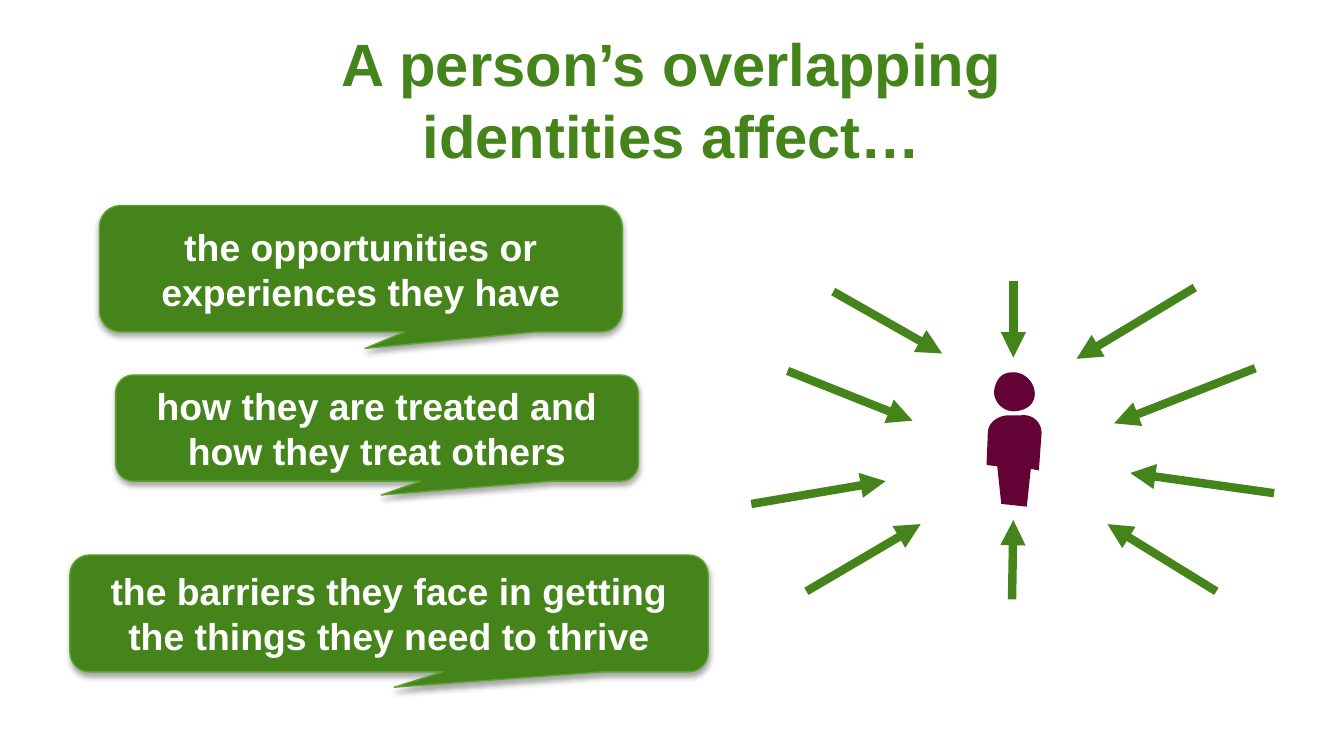
from dataclasses import dataclass

from lxml.etree import SubElement
from pptx import Presentation
from pptx.dml.color import RGBColor
from pptx.enum.shapes import MSO_CONNECTOR, MSO_SHAPE
from pptx.enum.text import MSO_ANCHOR, PP_ALIGN
from pptx.oxml.ns import qn
from pptx.util import Inches, Pt


@dataclass(frozen=True)
class Theme:
    font: str = "Arial"
    green: RGBColor = RGBColor(0x44, 0x84, 0x1A)
    light_green: RGBColor = RGBColor(0x5E, 0xA4, 0x30)
    plum: RGBColor = RGBColor(0x63, 0x02, 0x35)
    white: RGBColor = RGBColor(0xFF, 0xFF, 0xFF)
    title_size: int = 32
    callout_size: int = 20
    arrow_width: float = 4.5
    outline_width: float = 0.75


THEME = Theme()

CALLOUTS = [
    ("the opportunities or experiences they have", 0.74, 1.53, 3.89, 0.94),
    ("how they are treated and how they treat others", 0.86, 2.79, 3.89, 0.79),
    ("the barriers they face in getting the things they need to thrive",
     0.52, 4.13, 4.75, 0.87),
]

# Each arrow runs from its outer end to its head beside the person.
ARROWS = [
    ((6.2, 2.17), (7.01, 2.63)),
    ((9.05, 4.4), (8.24, 3.9)),
    ((9.48, 3.67), (8.41, 3.52)),
    ((9.34, 2.74), (8.29, 3.15)),
    ((8.89, 2.14), (8.01, 2.67)),
    ((6, 4.4), (6.85, 3.9)),
    ((5.86, 2.76), (6.79, 3.13)),
    ((5.59, 3.75), (6.59, 3.58)),
    ((7.54, 2.09), (7.54, 2.66)),
    ((7.53, 4.46), (7.54, 3.87)),
]

# A segment is one point for a straight edge, or two controls and an end point.
HEAD = [
    [(7.54, 3.06)],
    [(7.63, 3.06), (7.7, 3.01), (7.7, 2.93)],
    [(7.7, 2.85), (7.63, 2.77), (7.54, 2.77)],
    [(7.46, 2.77), (7.42, 2.81), (7.4, 2.89)],
    [(7.38, 2.98), (7.46, 3.06), (7.54, 3.06)],
]
BODY = [
    [(7.6, 3.09)],
    [(7.51, 3.09)],
    [(7.42, 3.09), (7.35, 3.15), (7.35, 3.22)],
    [(7.34, 3.46)],
    [(7.42, 3.47)],
    [(7.45, 3.75)],
    [(7.64, 3.77)],
    [(7.67, 3.49)],
    [(7.73, 3.5)],
    [(7.75, 3.22)],
    [(7.75, 3.15), (7.69, 3.08), (7.6, 3.09)],
]


def write_text(shape, text, *, size, color, anchor):
    frame = shape.text_frame
    frame.word_wrap = True
    frame.vertical_anchor = anchor
    paragraph = frame.paragraphs[0]
    paragraph.alignment = PP_ALIGN.CENTER
    run = paragraph.add_run()
    run.text = text
    run.font.name = THEME.font
    run.font.size = Pt(size)
    run.font.bold = True
    run.font.color.rgb = color


def add_title(slide, text):
    box = slide.shapes.add_textbox(Inches(1.45), Inches(0.15), Inches(7.1), Inches(0.79))
    write_text(box, text, size=THEME.title_size, color=THEME.green, anchor=MSO_ANCHOR.TOP)


def add_soft_shadow(shape):
    shape.shadow.inherit = False
    effects = shape.element.spPr.find(qn("a:effectLst"))
    shadow = SubElement(effects, qn("a:outerShdw"), blurRad=str(Pt(3.1)),
                        dist=str(Pt(1.8)), dir="5400000", rotWithShape="0")
    color = SubElement(shadow, qn("a:srgbClr"), val="000000")
    SubElement(color, qn("a:alpha"), val="35000")


def add_callout(slide, text, left, top, width, height):
    shape = slide.shapes.add_shape(
        MSO_SHAPE.ROUNDED_RECTANGULAR_CALLOUT,
        Inches(left), Inches(top), Inches(width), Inches(height))
    for index, value in enumerate((0.008, 0.631, 0.167)):
        shape.adjustments[index] = value
    shape.fill.solid()
    shape.fill.fore_color.rgb = THEME.green
    shape.line.color.rgb = THEME.light_green
    shape.line.width = Pt(THEME.outline_width)
    add_soft_shadow(shape)
    write_text(shape, text, size=THEME.callout_size, color=THEME.white,
               anchor=MSO_ANCHOR.MIDDLE)


def add_arrow(slide, start, end):
    arrow = slide.shapes.add_connector(
        MSO_CONNECTOR.STRAIGHT, *map(Inches, start + end))
    arrow.line.color.rgb = THEME.green
    arrow.line.width = Pt(THEME.arrow_width)
    properties = arrow.element.spPr
    SubElement(properties.find(qn("a:ln")), qn("a:tailEnd"), type="triangle")
    SubElement(properties, qn("a:effectLst"))


def curve_points(start, first, second, end, steps=12):
    """Sample a cubic Bezier curve, leaving out its start."""
    for step in range(1, steps + 1):
        t = step / steps
        weights = ((1 - t) ** 3, 3 * t * (1 - t) ** 2, 3 * t ** 2 * (1 - t), t ** 3)
        yield tuple(sum(weight * value for weight, value in zip(weights, values))
                    for values in zip(start, first, second, end))


def add_outline(slide, segments):
    points = []
    for segment in segments:
        if len(segment) == 1:
            points.append(segment[0])
        else:
            points.extend(curve_points(points[-1], *segment))
    start, *rest = [(Inches(x), Inches(y)) for x, y in points]
    builder = slide.shapes.build_freeform(*start)
    builder.add_line_segments(rest, close=True)
    shape = builder.convert_to_shape()
    shape.shadow.inherit = False
    shape.fill.solid()
    shape.fill.fore_color.rgb = THEME.plum
    shape.line.fill.background()


def main():
    presentation = Presentation()
    presentation.slide_width = Inches(10)
    presentation.slide_height = Inches(10) * 9 // 16
    slide = presentation.slides.add_slide(presentation.slide_layouts[6])

    add_title(slide, "A person’s overlapping identities affect…")
    for segments in (HEAD, BODY):
        add_outline(slide, segments)
    for start, end in ARROWS:
        add_arrow(slide, start, end)
    for callout in CALLOUTS:
        add_callout(slide, *callout)

    presentation.save("out.pptx")


if __name__ == "__main__":
    main()
